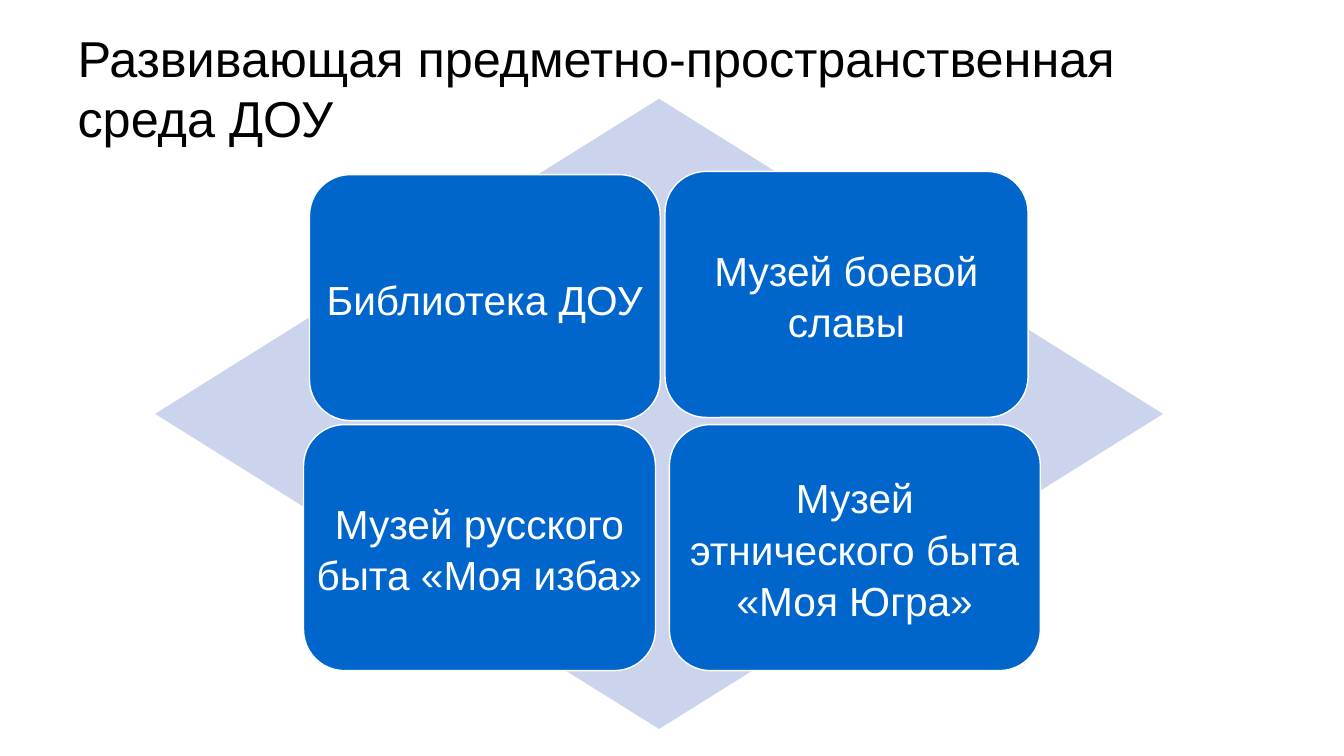
import pptx
import pptx.util
import pptx.dml.color
import pptx.enum.shapes
import pptx.enum.text
from pptx.util import Cm

SHAPE = pptx.enum.shapes.MSO_SHAPE
ALIGN = pptx.enum.text.PP_ALIGN
MIDDLE = pptx.enum.text.MSO_ANCHOR.MIDDLE


def rgb(value):
    return pptx.dml.color.RGBColor.from_string(value)


def add_run(p, text, size, color):
    r = p.add_run()
    r.text = text
    r.font.name = "Arial"
    r.font.size = pptx.util.Pt(size)
    r.font.color.rgb = rgb(color)


prs = pptx.Presentation()
prs.slide_width, prs.slide_height = Cm(33.87), Cm(19.05)
s = prs.slides.add_slide(prs.slide_layouts[5])

# Title
title = s.shapes.title
title.left, title.top, title.width, title.height = Cm(1.7), Cm(0.53), Cm(30.48), Cm(3.33)
tf = title.text_frame
tf.word_wrap = True
tf.vertical_anchor = MIDDLE
p = tf.paragraphs[0]
p.alignment = ALIGN.LEFT
add_run(p, "Развивающая предметно-пространственная", 36, "000000")
p.add_line_break()
add_run(p, "среда ДОУ", 36, "000000")

# Diamond behind the boxes
diamond = s.shapes.add_shape(SHAPE.DIAMOND, Cm(3.91), Cm(2.49), Cm(25.4), Cm(15.88))
diamond.shadow.inherit = False
diamond.fill.solid()
diamond.fill.fore_color.rgb = rgb("CCD3EC")
diamond.line.fill.background()

# Four boxes: left, top, width, text
boxes = [
    (7.8, 4.4, 8.84, "Библиотека ДОУ"),
    (16.76, 4.32, 9.15, "Музей боевой славы"),
    (7.65, 10.7, 8.87, "Музей русского быта «Моя изба»"),
    (16.87, 10.7, 9.35, "Музей этнического быта «Моя Югра»"),
]
for left, top, width, text in boxes:
    sp = s.shapes.add_shape(SHAPE.ROUNDED_RECTANGLE, Cm(left), Cm(top), Cm(width), Cm(6.2))
    sp.shadow.inherit = False
    sp.fill.solid()
    sp.fill.fore_color.rgb = rgb("0066CC")
    sp.line.color.rgb = rgb("FFFFFF")
    sp.line.width = pptx.util.Pt(1)
    tf = sp.text_frame
    tf.word_wrap = True
    tf.vertical_anchor = MIDDLE
    tf.margin_left = tf.margin_right = tf.margin_top = tf.margin_bottom = 0
    p = tf.paragraphs[0]
    p.alignment = ALIGN.CENTER
    p.line_spacing = 1.05
    add_run(p, text, 29, "FFFFFF")

prs.save("out.pptx")
